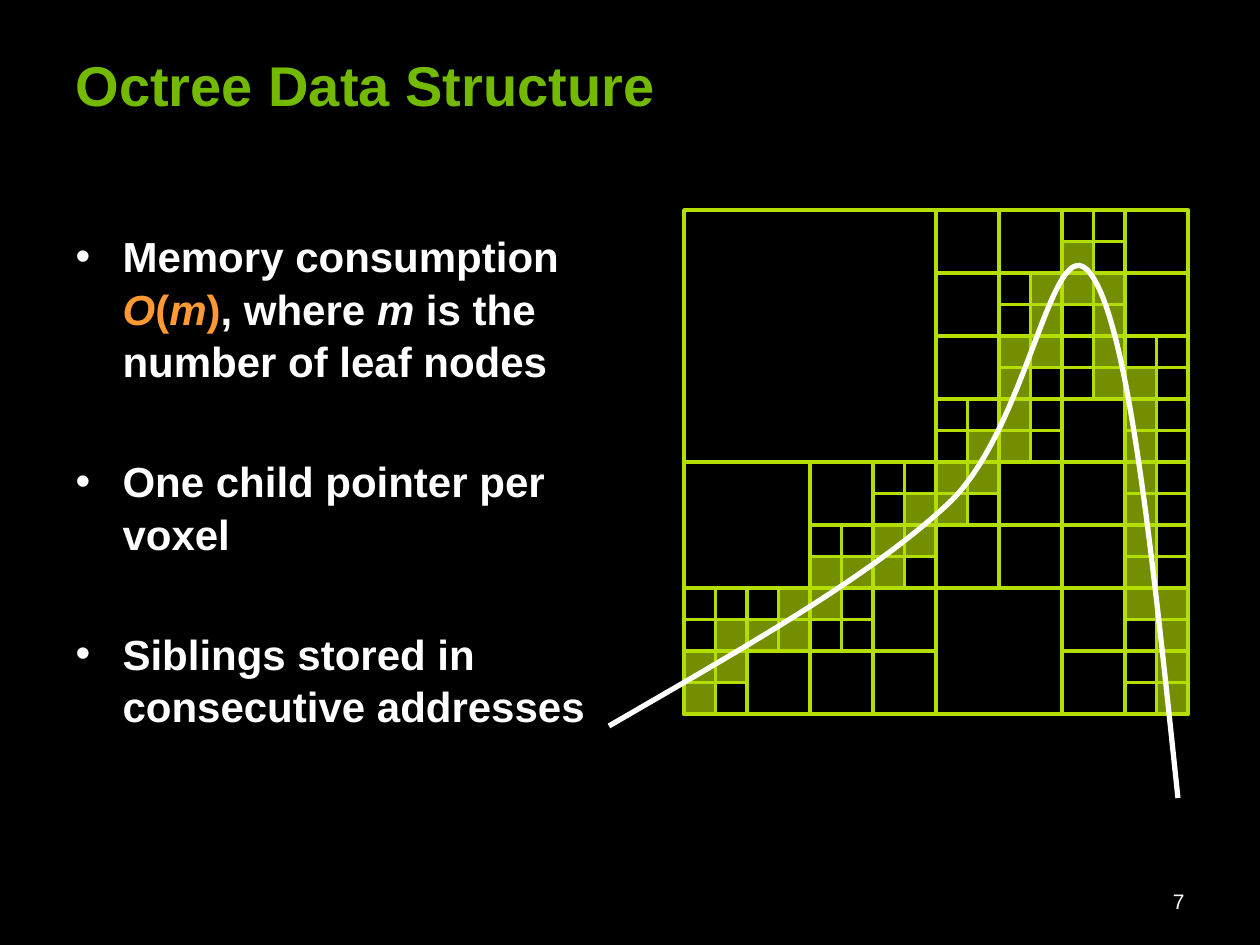
"""Build the Octree Data Structure slide with its subdivided grid and curve."""
from lxml import etree
from pptx import Presentation
from pptx import util as u
from pptx.dml.color import RGBColor
from pptx.enum import shapes, text
from pptx.oxml import ns

BLACK = RGBColor(0x00, 0x00, 0x00)
WHITE = RGBColor(0xFF, 0xFF, 0xFF)
GREEN = RGBColor(0x73, 0xB9, 0x00)
LIME = RGBColor(0xB4, 0xDE, 0x00)
OLIVE = RGBColor(0x73, 0x8E, 0x00)
ORANGE = RGBColor(0xFF, 0x99, 0x33)
PX = 914400 / 126


def add_run(paragraph, wording, colour, **formats):
    run = paragraph.add_run()
    run.text = wording
    run.font.color.rgb = colour
    for key, value in {"name": "Arial", **formats}.items():
        setattr(run.font, key, value)


def outline(part, colour, points):
    part.line.color.rgb = colour
    part.line.width = u.Pt(points)
    etree.SubElement(part._element.spPr, ns.qn("a:effectLst"))


deck = Presentation()
deck.slide_width, deck.slide_height = u.Inches(10), u.Inches(7.5)
slide = deck.slides.add_slide(deck.slide_layouts[1])
slide.background.fill.solid()
slide.background.fill.fore_color.rgb = BLACK

title, body = slide.placeholders
page_number = slide.shapes.add_textbox(0, 0, 0, 0)
TOP, MIDDLE = text.MSO_ANCHOR.TOP, text.MSO_ANCHOR.MIDDLE
for part, box, margin_top, anchor in (
    (title, (63, 38, 1018, 79), 12, TOP),
    (body, (63, 221, 599, 672), 8, TOP),
    (page_number, (903, 876, 294, 50), 6, MIDDLE),
):
    for key, value in zip(("left", "top", "width", "height"), box):
        setattr(part, key, round(value * PX))
    frame_format = {
        "word_wrap": True,
        "auto_size": text.MSO_AUTO_SIZE.NONE,
        "vertical_anchor": anchor,
        "margin_top": round(margin_top * PX),
    }
    for key, value in frame_format.items():
        setattr(part.text_frame, key, value)

heading = title.text_frame.paragraphs[0]
heading.alignment = text.PP_ALIGN.LEFT
add_run(heading, "Octree Data Structure", GREEN, size=u.Pt(32), bold=True)
number = page_number.text_frame.paragraphs[0]
number.alignment = text.PP_ALIGN.RIGHT
add_run(number, "7", WHITE, size=u.Pt(12))

points = [
    [
        ("Memory consumption ", WHITE, False),
        ("O", ORANGE, True),
        ("(", ORANGE, False),
        ("m", ORANGE, True),
        (")", ORANGE, False),
        (", where ", WHITE, False),
        ("m", WHITE, True),
        (" is the number of leaf nodes", WHITE, False),
    ],
    [("One child pointer per voxel", WHITE, False)],
    [("Siblings stored in consecutive addresses", WHITE, False)],
]
for index, runs in enumerate(points):
    point = body.text_frame.paragraphs[0] if index == 0 else body.text_frame.add_paragraph()
    properties = point._p.get_or_add_pPr()
    properties.set("marL", str(round(47 * PX)))
    properties.set("indent", str(round(-47 * PX)))
    etree.SubElement(properties, ns.qn("a:buChar"), char="•")
    point.line_spacing = 1.04
    point.space_before = u.Pt(38.6 if index else 0)
    for wording, colour, italic in runs:
        add_run(point, wording, colour, size=u.Pt(24), bold=True, italic=italic)

CELLS = 16
SIDE = 504
grid_x = [round((684 + SIDE * n / CELLS) * PX) for n in range(CELLS + 1)]
grid_y = [round((210 + SIDE * n / CELLS) * PX) for n in range(CELLS + 1)]
cell_side = round(SIDE / CELLS * PX)
column_rows = [
    (14, 15), (13, 14), (13, 13), (12, 13), (11, 12), (11, 11), (10, 11), (9, 10),
    (8, 9), (7, 8), (4, 7), (2, 4), (1, 2), (2, 5), (5, 12), (12, 15),
]
leaves = [
    (column, row)
    for column, (first, last) in enumerate(column_rows)
    for row in range(first, last + 1)
]

root = slide.shapes.add_shape(
    shapes.MSO_SHAPE.RECTANGLE, grid_x[0], grid_y[0], round(SIDE * PX), round(SIDE * PX)
)
root.fill.background()
outline(root, LIME, 2)

for size in (16, 8, 4, 2):
    half = size // 2
    nodes = sorted({(c // size * size, r // size * size) for c, r in leaves})
    for column, row in nodes:
        splits = (
            (column + half, row, column + half, row + size, 0, 2),
            (column, row + half, column + size, row + half, 1, 3),
        )
        for x1, y1, x2, y2, start_side, end_side in splits:
            split = slide.shapes.add_connector(
                shapes.MSO_CONNECTOR.STRAIGHT, grid_x[x1], grid_y[y1], grid_x[x2], grid_y[y2]
            )
            outline(split, LIME, 2)
            if size == CELLS:
                split.begin_connect(root, start_side)
                split.end_connect(root, end_side)

for column, row in leaves:
    leaf = slide.shapes.add_shape(
        shapes.MSO_SHAPE.RECTANGLE, grid_x[column], grid_y[row], cell_side, cell_side
    )
    leaf.fill.solid()
    leaf.fill.fore_color.rgb = OLIVE
    outline(leaf, LIME, 2)

controls = [
    (738, 651), (869, 578), (949, 503),
    (1029, 427), (1052, 224), (1090, 273),
    (1129, 323), (1153, 561), (1178, 798),
]
builder = slide.shapes.build_freeform(609, 726, scale=PX)
builder.add_line_segments(controls, close=False)
curve = builder.convert_to_shape()
curve.fill.background()
outline(curve, WHITE, 3)
segments = list(curve._element.iter(ns.qn("a:lnTo")))
for start in range(0, len(segments), 3):
    bezier = etree.SubElement(segments[start].getparent(), ns.qn("a:cubicBezTo"))
    for segment in segments[start:start + 3]:
        bezier.append(segment[0])
        segment.getparent().remove(segment)

deck.save("out.pptx")
